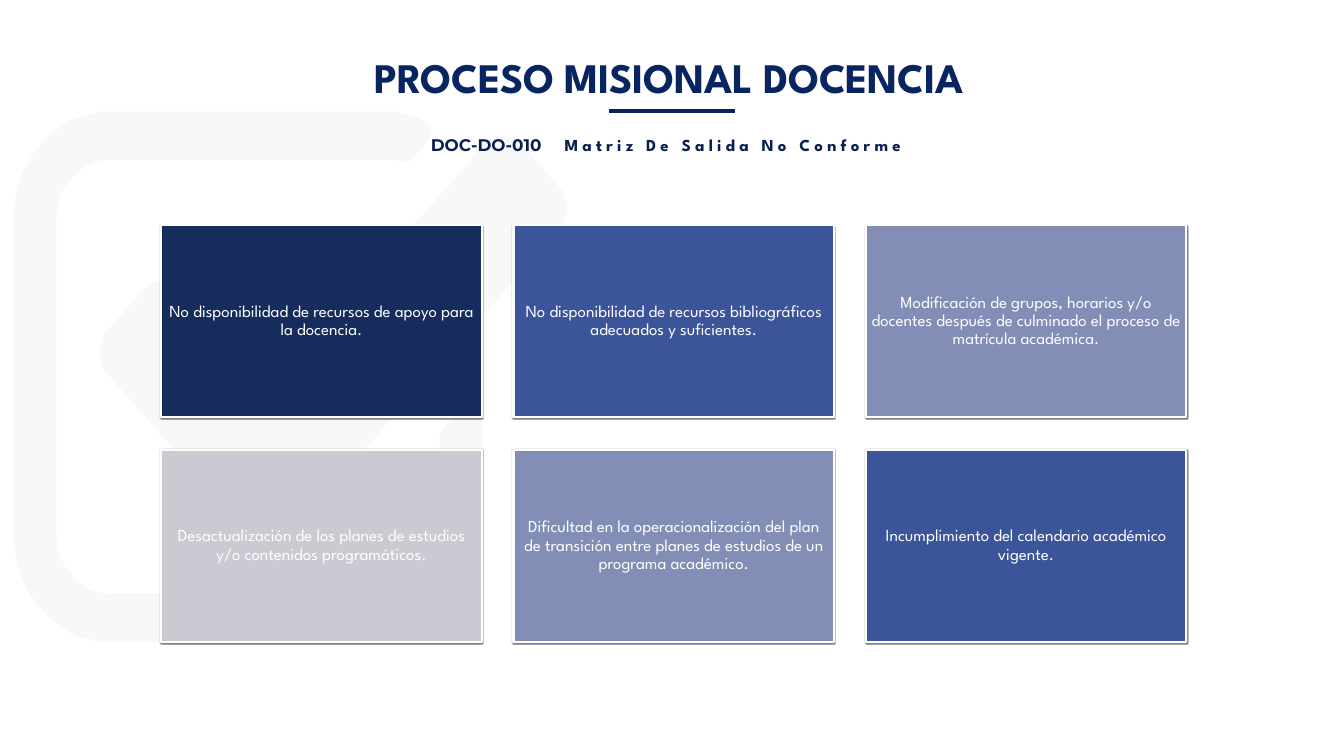
from lxml import etree
from pptx import Presentation
from pptx.dml.color import RGBColor
from pptx.enum.shapes import MSO_CONNECTOR, MSO_SHAPE
from pptx.enum.text import MSO_ANCHOR, MSO_AUTO_SIZE, PP_ALIGN
from pptx.oxml.ns import qn
from pptx.util import Inches, Pt

SLIDE_WIDTH, SLIDE_HEIGHT = Inches(26.67), Inches(15)
RECTANGLE = MSO_SHAPE.RECTANGLE
STRAIGHT = MSO_CONNECTOR.STRAIGHT
CENTER = PP_ALIGN.CENTER
TOP, MIDDLE = MSO_ANCHOR.TOP, MSO_ANCHOR.MIDDLE
GROW = MSO_AUTO_SIZE.SHAPE_TO_FIT_TEXT

WHITE = RGBColor(0xFF, 0xFF, 0xFF)
PALE_GREY = RGBColor(0xF3, 0xF3, 0xF3)
TITLE_BLUE = RGBColor(0x09, 0x25, 0x61)
SUBTITLE_BLUE = RGBColor(0x08, 0x1F, 0x50)
NAVY = RGBColor(0x16, 0x2C, 0x5C)
BLUE = RGBColor(0x3C, 0x54, 0x9A)
LAVENDER = RGBColor(0x83, 0x8E, 0xB6)
SILVER = RGBColor(0xCA, 0xCB, 0xD2)

SPARTAN, MONTSERRAT = "League Spartan", "Montserrat"

CARD_COLUMNS = 3
CARD_LEFT, CARD_TOP = 12, 29.8
CARD_WIDTH, CARD_HEIGHT = 23.85, 25.4
COLUMN_PITCH, ROW_PITCH = 26.21, 29.67

NONCONFORMITIES = [
    ("No disponibilidad de recursos de apoyo para la docencia.", NAVY),
    ("No disponibilidad de recursos bibliográficos adecuados y suficientes.", BLUE),
    ("Modificación de grupos, horarios y/o docentes después de culminado "
     "el proceso de matrícula académica.", LAVENDER),
    ("Desactualización de los planes de estudios y/o contenidos programáticos.", SILVER),
    ("Dificultad en la operacionalización del plan de transición entre planes "
     "de estudios de un programa académico.", LAVENDER),
    ("Incumplimiento del calendario académico vigente.", BLUE),
]

CHECK_MARK = [
    (9.99, 2.7), (10.13, 2.7, 10.26, 2.76, 10.36, 2.88), (11.09, 3.7),
    (11.19, 3.82, 11.25, 3.96, 11.25, 4.12), (11.25, 4.29, 11.19, 4.43, 11.09, 4.55),
    (5.72, 10.63), (5.61, 10.75, 5.49, 10.81, 5.34, 10.81),
    (5.2, 10.81, 5.07, 10.75, 4.96, 10.63), (2.13, 7.42),
    (2.02, 7.3, 1.97, 7.16, 1.97, 6.99), (1.97, 6.83, 2.02, 6.69, 2.13, 6.57),
    (2.85, 5.74), (2.96, 5.63, 3.08, 5.57, 3.23, 5.57),
    (3.37, 5.57, 3.5, 5.63, 3.6, 5.74), (5.34, 7.71), (9.61, 2.88),
    (9.72, 2.76, 9.84, 2.7, 9.99, 2.7),
]
CHECK_FRAME = [
    (2.17, 2.21), (7.66, 2.21), (7.94, 2.21, 8.2, 2.27, 8.43, 2.4),
    (8.5, 2.43, 8.54, 2.49, 8.55, 2.57), (8.57, 2.65, 8.55, 2.73, 8.49, 2.79),
    (8.17, 3.15), (8.13, 3.2, 8.08, 3.23, 8.02, 3.23),
    (8.01, 3.23, 7.99, 3.22, 7.96, 3.21), (7.86, 3.18, 7.76, 3.17, 7.66, 3.17),
    (2.17, 3.17), (1.88, 3.17, 1.63, 3.28, 1.43, 3.52),
    (1.22, 3.75, 1.12, 4.03, 1.12, 4.36), (1.12, 10.58),
    (1.12, 10.91, 1.22, 11.19, 1.43, 11.42), (1.63, 11.66, 1.88, 11.77, 2.17, 11.77),
    (7.66, 11.77), (7.95, 11.77, 8.2, 11.66, 8.41, 11.42),
    (8.62, 11.19, 8.72, 10.91, 8.72, 10.58), (8.72, 8.68),
    (8.72, 8.62, 8.74, 8.56, 8.78, 8.52), (9.2, 8.04),
    (9.24, 7.99, 9.29, 7.96, 9.35, 7.96), (9.38, 7.96, 9.4, 7.97, 9.43, 7.99),
    (9.52, 8.03, 9.56, 8.1, 9.56, 8.2), (9.56, 10.58),
    (9.56, 11.17, 9.38, 11.68, 9.01, 12.1), (8.63, 12.52, 8.19, 12.73, 7.66, 12.73),
    (2.17, 12.73), (1.65, 12.73, 1.2, 12.52, 0.83, 12.1),
    (0.46, 11.68, 0.27, 11.17, 0.27, 10.58), (0.27, 4.36),
    (0.27, 3.77, 0.46, 3.26, 0.83, 2.84), (1.2, 2.42, 1.65, 2.21, 2.17, 2.21),
]
EMBLEM_LEFT, EMBLEM_TOP = 0.27, 2.21
UNITS_PER_INCH = 100


def across(percent):
    return round(SLIDE_WIDTH * percent / 100)


def down(percent):
    return round(SLIDE_HEIGHT * percent / 100)


def area(left, top, width, height):
    return across(left), down(top), across(width), down(height)


def units(inches):
    return round(inches * UNITS_PER_INCH)


def corners(outline):
    return [(units(segment[-2]), units(segment[-1])) for segment in outline]


def bend(side, controls):
    curve = etree.Element(qn("a:cubicBezTo"))
    for x, y in zip(controls[::2], controls[1::2]):
        etree.SubElement(curve, qn("a:pt"), x=str(units(x - EMBLEM_LEFT)),
                         y=str(units(y - EMBLEM_TOP)))
    side.getparent().replace(side, curve)


def add_check_emblem(slide):
    mark, frame = corners(CHECK_MARK), corners(CHECK_FRAME)
    builder = slide.shapes.build_freeform(*mark[0], scale=Inches(1) / UNITS_PER_INCH)
    builder.add_line_segments(mark[1:], close=True)
    builder.move_to(*frame[0])
    builder.add_line_segments(frame[1:], close=True)
    emblem = builder.convert_to_shape()
    sides = list(emblem._element.iter(qn("a:lnTo")))
    for side, segment in zip(sides, CHECK_MARK[1:] + CHECK_FRAME[1:]):
        if len(segment) > 2:
            bend(side, segment)
    emblem.shadow.inherit = False
    emblem.fill.solid()
    emblem.fill.fore_color.rgb = PALE_GREY
    emblem.line.fill.background()
    tint = emblem._element.spPr.find(qn("a:solidFill")).find(qn("a:srgbClr"))
    etree.SubElement(tint, qn("a:alpha"), val="50000")


def add_run(paragraph, words, size, color, font=SPARTAN, bold=False, tracking=0):
    run = paragraph.add_run()
    run.text = words
    run.font.size = Pt(size)
    run.font.name = font
    run.font.bold = bold
    run.font.color.rgb = color
    if tracking:
        run.font._element.set("spc", str(round(tracking * 100)))


def add_heading(slide, place, anchor, wrap, spacing=1.0):
    frame = slide.shapes.add_textbox(*place).text_frame
    frame.word_wrap = wrap
    frame.auto_size = GROW
    frame.vertical_anchor = anchor
    paragraph = frame.paragraphs[0]
    paragraph.alignment = CENTER
    paragraph.line_spacing = spacing
    return paragraph


def add_rule(slide, left, right, height):
    rule = slide.shapes.add_connector(
        STRAIGHT, across(left), down(height), across(right), down(height))
    rule.line.color.rgb = TITLE_BLUE
    rule.line.width = Pt(6)
    etree.SubElement(rule._element.spPr, qn("a:effectLst"))


def add_card_shadow(card):
    card.shadow.inherit = False
    effects = card._element.spPr.find(qn("a:effectLst"))
    shadow = etree.SubElement(effects, qn("a:outerShdw"), blurRad=str(Pt(1)),
                              dist=str(Pt(1)), dir="5400000", rotWithShape="0")
    shade = etree.SubElement(shadow, qn("a:srgbClr"), val="000000")
    etree.SubElement(shade, qn("a:alpha"), val="50000")


def add_card(slide, column, row, words, color):
    card = slide.shapes.add_shape(RECTANGLE, *area(
        CARD_LEFT + column * COLUMN_PITCH, CARD_TOP + row * ROW_PITCH,
        CARD_WIDTH, CARD_HEIGHT))
    card.fill.solid()
    card.fill.fore_color.rgb = color
    card.line.color.rgb = WHITE
    card.line.width = Pt(3)
    add_card_shadow(card)
    frame = card.text_frame
    frame.word_wrap = True
    frame.vertical_anchor = MIDDLE
    frame.margin_left = frame.margin_right = Inches(0.1)
    frame.margin_top = frame.margin_bottom = Inches(0.1)
    paragraph = frame.paragraphs[0]
    paragraph.alignment = CENTER
    paragraph.line_spacing = 0.9
    add_run(paragraph, words, 24, WHITE)


def main():
    deck = Presentation()
    deck.slide_width, deck.slide_height = SLIDE_WIDTH, SLIDE_HEIGHT
    slide = deck.slides.add_slide(deck.slide_layouts[6])

    add_check_emblem(slide)
    title = add_heading(slide, area(21.6, 6.47, 56.4, 7.4), TOP, True)
    add_run(title, "PROCESO MISIONAL DOCENCIA", 60, TITLE_BLUE, bold=True, tracking=-0.5)
    subtitle = add_heading(slide, area(31.53, 17, 36.03, 3.67), MIDDLE, False, 1.2)
    add_run(subtitle, "DOC-DO-010", 24, SUBTITLE_BLUE, MONTSERRAT, True)
    add_run(subtitle, " ", 24, SUBTITLE_BLUE, MONTSERRAT, True, 26)
    add_run(subtitle, "Matriz De Salida No Conforme", 24, SUBTITLE_BLUE,
            bold=True, tracking=6)
    add_rule(slide, 45.33, 54.71, 14.73)

    for index, (words, color) in enumerate(NONCONFORMITIES):
        row, column = divmod(index, CARD_COLUMNS)
        add_card(slide, column, row, words, color)

    deck.save("out.pptx")


if __name__ == "__main__":
    main()
